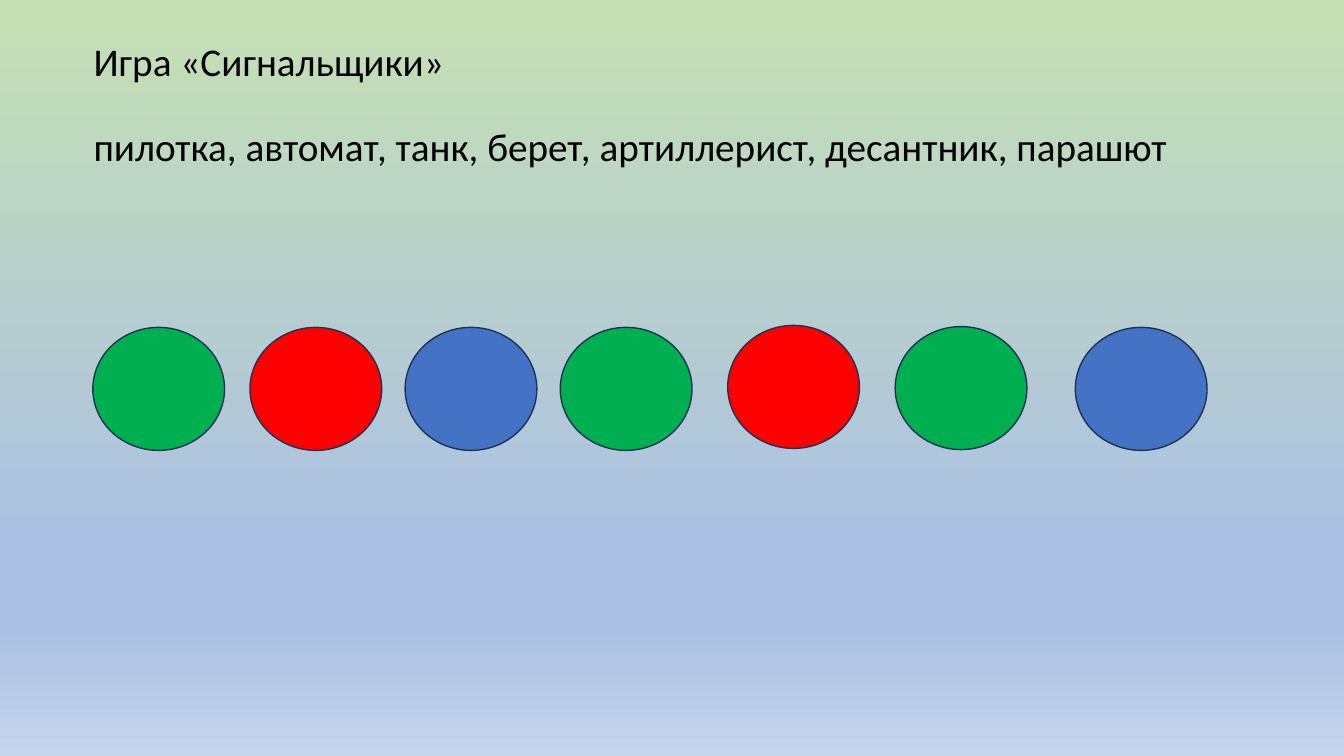
from lxml import etree
from pptx import Presentation
from pptx.dml.color import RGBColor
from pptx.enum.shapes import MSO_SHAPE
from pptx.enum.text import MSO_ANCHOR
from pptx.oxml.ns import qn
from pptx.util import Cm, Pt

OVAL = MSO_SHAPE.OVAL
MIDDLE = MSO_ANCHOR.MIDDLE

BLACK = RGBColor(0x00, 0x00, 0x00)
GREEN = RGBColor(0x00, 0xB0, 0x50)
RED = RGBColor(0xFF, 0x00, 0x00)
BLUE = RGBColor(0x44, 0x72, 0xC4)
OUTLINE = RGBColor(0x1E, 0x32, 0x56)
LIGHT_GREEN = RGBColor(0xC5, 0xE0, 0xB4)
LIGHT_BLUE = RGBColor(0xAB, 0xC0, 0xE4)
PALE_BLUE = RGBColor(0xC7, 0xD5, 0xED)

# Content
HEADING_LINES = [
    "Игра «Сигнальщики»",
    "пилотка, автомат, танк, берет, артиллерист, десантник, парашют",
]
# Signal circles: left and top in cm, colour
SIGNALS = [
    (2.34, 8.25, GREEN),
    (6.3, 8.25, RED),
    (10.21, 8.25, BLUE),
    (14.12, 8.25, GREEN),
    (18.34, 8.2, RED),
    (22.56, 8.23, GREEN),
    (27.1, 8.25, BLUE),
]
SIGNAL_WIDTH, SIGNAL_HEIGHT = Cm(3.32), Cm(3.1)
# Background gradient: position in percent, colour
GRADIENT_STOPS = [
    (0, LIGHT_GREEN),
    (74, LIGHT_BLUE),
    (83, LIGHT_BLUE),
    (100, PALE_BLUE),
]

presentation = Presentation()
presentation.slide_width, presentation.slide_height = Cm(33.87), Cm(19.05)
slide = presentation.slides.add_slide(presentation.slide_layouts[6])

# Background, running from top to bottom
background_fill = slide.background.fill
background_fill.gradient()
background_fill.gradient_angle = 270
stop_list = slide.element.find(".//" + qn("a:gsLst"))
for old_stop in list(stop_list):
    stop_list.remove(old_stop)
for percent, color in GRADIENT_STOPS:
    stop = etree.SubElement(stop_list, qn("a:gs"), pos=str(percent * 1000))
    etree.SubElement(stop, qn("a:srgbClr"), val=str(color))

# Heading and word list
heading = slide.shapes.add_textbox(Cm(2.11), Cm(0.36), Cm(27.69), Cm(4.62))
text_frame = heading.text_frame
text_frame.word_wrap = True
text_frame.vertical_anchor = MIDDLE
text_frame.text = "\n".join(HEADING_LINES)
for index, paragraph in enumerate(text_frame.paragraphs):
    paragraph.line_spacing = 0.9
    paragraph.space_before = Pt(30.5 if index else 0)
    paragraph.font.name = "Calibri"
    paragraph.font.size = Pt(28)
    paragraph.font.color.rgb = BLACK

# Signal circles
for left, top, color in SIGNALS:
    circle = slide.shapes.add_shape(
        OVAL, Cm(left), Cm(top), SIGNAL_WIDTH, SIGNAL_HEIGHT
    )
    circle.shadow.inherit = False
    circle.fill.solid()
    circle.fill.fore_color.rgb = color
    circle.line.color.rgb = OUTLINE
    circle.line.width = Pt(1)

presentation.save("out.pptx")
